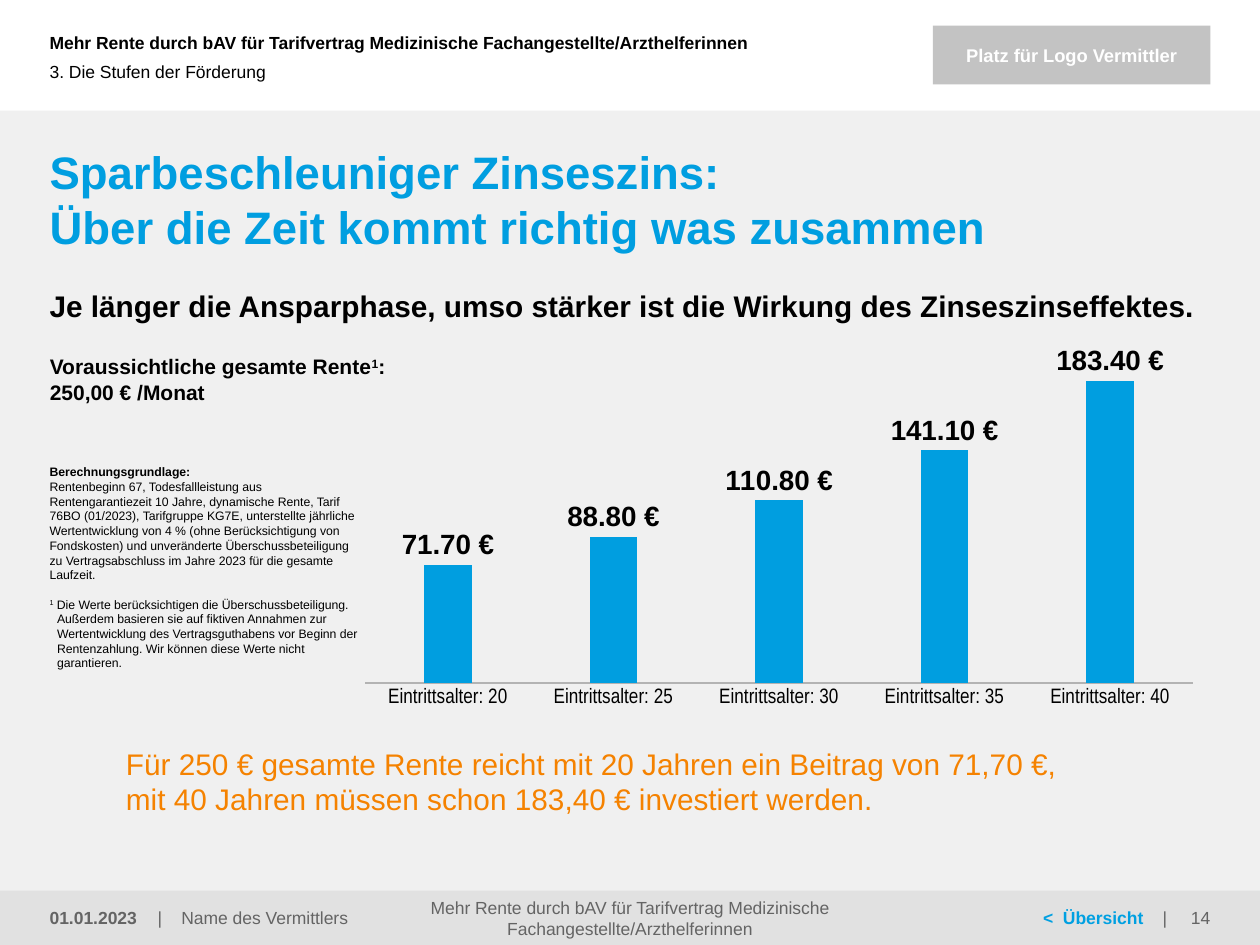
"""Build the slide on compound interest with a column chart of savings by entry age."""
from lxml import etree
from pptx import Presentation
from pptx.chart.data import CategoryChartData
from pptx.dml.color import RGBColor
from pptx.enum.chart import XL_CHART_TYPE, XL_LABEL_POSITION, XL_TICK_MARK
from pptx.enum.shapes import MSO_SHAPE
from pptx.enum.text import MSO_ANCHOR, MSO_AUTO_SIZE, PP_ALIGN
from pptx.oxml.ns import qn
from pptx.util import Pt

TOP, MIDDLE, BOTTOM = MSO_ANCHOR.TOP, MSO_ANCHOR.MIDDLE, MSO_ANCHOR.BOTTOM
LEFT, CENTER, RIGHT = PP_ALIGN.LEFT, PP_ALIGN.CENTER, PP_ALIGN.RIGHT
RECTANGLE = MSO_SHAPE.RECTANGLE
COLUMNS = XL_CHART_TYPE.COLUMN_CLUSTERED
OUTSIDE_END = XL_LABEL_POSITION.OUTSIDE_END
NO_TICKS = XL_TICK_MARK.NONE

BLACK = RGBColor(0x00, 0x00, 0x00)
WHITE = RGBColor(0xFF, 0xFF, 0xFF)
BLUE = RGBColor(0x00, 0x9E, 0xE0)
LINK_BLUE = RGBColor(0x00, 0xA0, 0xE1)
ORANGE = RGBColor(0xF5, 0x82, 0x00)
TEXT_GRAY = RGBColor(0x64, 0x64, 0x64)
AXIS_GRAY = RGBColor(0xB3, 0xB3, 0xB3)
LOGO_GRAY = RGBColor(0xC3, 0xC3, 0xC3)
FOOTER_GRAY = RGBColor(0xE1, 0xE1, 0xE1)
BODY_GRAY = RGBColor(0xF0, 0xF0, 0xF0)

MARGIN = 28.35
FOOTER_TOP, FOOTER_HEIGHT = 509, 31
CAMPAIGN = "Mehr Rente durch bAV für Tarifvertrag Medizinische Fachangestellte/Arzthelferinnen"


def write(shape, paragraphs, size, color, bold=False, anchor=MIDDLE, alignment=LEFT, insets=(0, 0, 0, 0)):
    """Fill a shape with paragraphs, each a list of text pieces."""
    frame = shape.text_frame
    frame.word_wrap = True
    frame.auto_size = MSO_AUTO_SIZE.NONE
    frame.vertical_anchor = anchor
    frame.margin_left, frame.margin_top, frame.margin_right, frame.margin_bottom = map(Pt, insets)
    for index, pieces in enumerate(paragraphs):
        paragraph = frame.add_paragraph() if index else frame.paragraphs[0]
        paragraph.text = pieces[0]
        for piece in pieces[1:]:
            paragraph.add_run().text = piece
        paragraph.alignment = alignment
        paragraph.line_spacing = 1.0
        for run in paragraph.runs:
            run.font.name = "Arial"
            run.font.size = Pt(size)
            run.font.bold = bold
            run.font.color.rgb = color
    return frame.paragraphs


def set_tabs(paragraph, positions):
    """Add left tab stops to a paragraph."""
    tab_list = etree.SubElement(paragraph._p.get_or_add_pPr(), qn("a:tabLst"))
    for position in positions:
        etree.SubElement(tab_list, qn("a:tab"), pos=str(Pt(position)), algn="l")


presentation = Presentation()
presentation.slide_width, presentation.slide_height = Pt(720), Pt(540)
slide = presentation.slides.add_slide(presentation.slide_layouts[5])
shapes = slide.shapes
title = shapes.title

panels = []
for box, color in [
    ((0, 63.2, 720, 476.8), BODY_GRAY),
    ((0, FOOTER_TOP, 720, FOOTER_HEIGHT), FOOTER_GRAY),
    ((533.1, 14.6, 158.6, 33.6), LOGO_GRAY),
]:
    panel = shapes.add_shape(RECTANGLE, *map(Pt, box))
    panel.shadow.inherit = False
    panel.fill.solid()
    panel.fill.fore_color.rgb = color
    panel.line.fill.background()
    panels.append(panel)
write(panels[2], [["Platz für Logo Vermittler"]], 10.5, WHITE, True, alignment=CENTER)

shapes._spTree.append(title._element)
title.left, title.top, title.width, title.height = map(Pt, (MARGIN, 82.4, 663.6, 39.6))
write(title, [["Sparbeschleuniger Zinseszins:\vÜber die Zeit kommt richtig was zusammen"]], 26, BLUE, True, TOP)

for box, text, size, color, bold, anchor, alignment, insets in [
    ((0, 0, 502.6, 48.2), CAMPAIGN, 10, BLACK, True, MIDDLE, LEFT, (MARGIN, 3.6, 7.2, 3.6)),
    ((0, 18, 514.8, 45.4), "3. Die Stufen der Förderung", 10, BLACK, False, MIDDLE, LEFT, (MARGIN, 0, 0, 0)),
    ((MARGIN, 164.2, 663.6, 21), "Je länger die Ansparphase, umso stärker ist die Wirkung des Zinseszinseffektes.",
     17, BLACK, True, TOP, LEFT, (0, 0, 0, 0)),
    ((72, 424.8, 620, 49), "Für 250 € gesamte Rente reicht mit 20 Jahren ein Beitrag von 71,70 €,\v"
     "mit 40 Jahren müssen schon 183,40 € investiert werden.", 17, ORANGE, False, MIDDLE, LEFT, (0, 0, 0, 5.8)),
    ((0, FOOTER_TOP, 87.8, FOOTER_HEIGHT), "01.01.2023", 10, TEXT_GRAY, True, MIDDLE, LEFT, (MARGIN, 3.6, 7.2, 3.6)),
    ((211.2, FOOTER_TOP, 297.4, FOOTER_HEIGHT), CAMPAIGN, 10, TEXT_GRAY, False, MIDDLE, CENTER, (0, 0, 0, 0)),
    ((652.3, FOOTER_TOP, 67.7, FOOTER_HEIGHT), "14", 10, TEXT_GRAY, False, MIDDLE, RIGHT, (7.2, 3.6, MARGIN, 3.6)),
]:
    text_box = shapes.add_textbox(*map(Pt, box))
    write(text_box, [[text]], size, color, bold, anchor, alignment, insets)

agent_box = shapes.add_textbox(Pt(90), Pt(FOOTER_TOP), Pt(120), Pt(FOOTER_HEIGHT))
agent = write(agent_box, [["|\tName des Vermittlers"]], 10, TEXT_GRAY)[0]
set_tabs(agent, [13.6])

overview_box = shapes.add_textbox(Pt(596), Pt(FOOTER_TOP), Pt(76), Pt(FOOTER_HEIGHT))
overview = write(overview_box, [["<\tÜbersicht", "\t|"]], 10, LINK_BLUE, True)[0]
set_tabs(overview, [11.4, 68.4])
overview.runs[1].font.bold = False
overview.runs[1].font.color.rgb = TEXT_GRAY

pension_box = shapes.add_textbox(Pt(28.5), Pt(202.3), Pt(360), Pt(31.7))
pension = write(pension_box, [["Voraussichtliche gesamte Rente", "1", ":"], ["250,00 € /Monat"]], 12, BLACK, True, TOP)

basis_box = shapes.add_textbox(Pt(MARGIN), Pt(252), Pt(180), Pt(131))
basis, footnote = write(basis_box, [
    ["Berechnungsgrundlage:\vRentenbeginn 67, Todesfallleistung aus Rentengarantiezeit 10 Jahre, dynamische Rente, "
     "Tarif 76BO (01/2023), Tarifgruppe KG7E, unterstellte jährliche Wertentwicklung von 4 % (ohne Berücksichtigung "
     "von Fondskosten) und unveränderte Überschussbeteiligung zu Vertragsabschluss im Jahre 2023 für die gesamte "
     "Laufzeit."],
    ["1", " Die Werte berücksichtigen die Überschussbeteiligung. Außerdem basieren sie auf fiktiven Annahmen zur "
     "Wertentwicklung des Vertragsguthabens vor Beginn der Rentenzahlung. Wir können diese Werte nicht garantieren."],
], 7, BLACK, anchor=BOTTOM)
basis.runs[0].font.bold = True
footnote.space_before = Pt(8.4)
footnote_properties = footnote._p.get_or_add_pPr()
footnote_properties.set("marL", str(Pt(4.3)))
footnote_properties.set("indent", str(-Pt(4.3)))
for run in (pension[0].runs[1], footnote.runs[0]):
    run._r.get_or_add_rPr().set("baseline", "30000")

chart_data = CategoryChartData()
chart_data.categories = [f"Eintrittsalter: {age}" for age in range(20, 45, 5)]
chart_data.add_series("Series 1", (71.7, 88.8, 110.8, 141.1, 183.4))
chart = shapes.add_chart(COLUMNS, Pt(201.9), Pt(194.9), Pt(481.7), Pt(218.2), chart_data).chart
chart.has_title = False
chart.has_legend = False
chart.font.name = "Arial Narrow"
chart.font.size = Pt(11.9)
chart.font.color.rgb = BLACK

category_axis = chart.category_axis
category_axis.major_tick_mark = NO_TICKS
category_axis.format.line.color.rgb = AXIS_GRAY
category_axis.format.line.width = Pt(1.5)
value_axis = chart.value_axis
value_axis.visible = False
value_axis.has_major_gridlines = False
value_axis.minimum_scale, value_axis.maximum_scale = 0, 200

plot = chart.plots[0]
plot.vary_by_categories = False
plot.gap_width = 250
plot.overlap = -20
series = plot.series[0]
series.format.fill.solid()
series.format.fill.fore_color.rgb = BLUE
labels = series.data_labels
labels.show_value = True
labels.position = OUTSIDE_END
labels.number_format = '#,##0.00\\ "€"'
labels.number_format_is_linked = False
labels.font.name = "Arial"
labels.font.size = Pt(15.9)
labels.font.bold = True
labels.font.color.rgb = BLACK

plot_area = chart._chartSpace.chart.plotArea
for old_layout in plot_area.findall(qn("c:layout")):
    plot_area.remove(old_layout)
layout = etree.Element(qn("c:layout"))
plot_area.insert(0, layout)
manual_layout = etree.SubElement(layout, qn("c:manualLayout"))
for tag, value in [
    ("layoutTarget", "inner"), ("xMode", "edge"), ("yMode", "edge"),
    ("x", "0.014"), ("y", "0.032"), ("w", "0.982"), ("h", "0.864"),
]:
    etree.SubElement(manual_layout, qn(f"c:{tag}"), val=value)

presentation.save("out.pptx")
